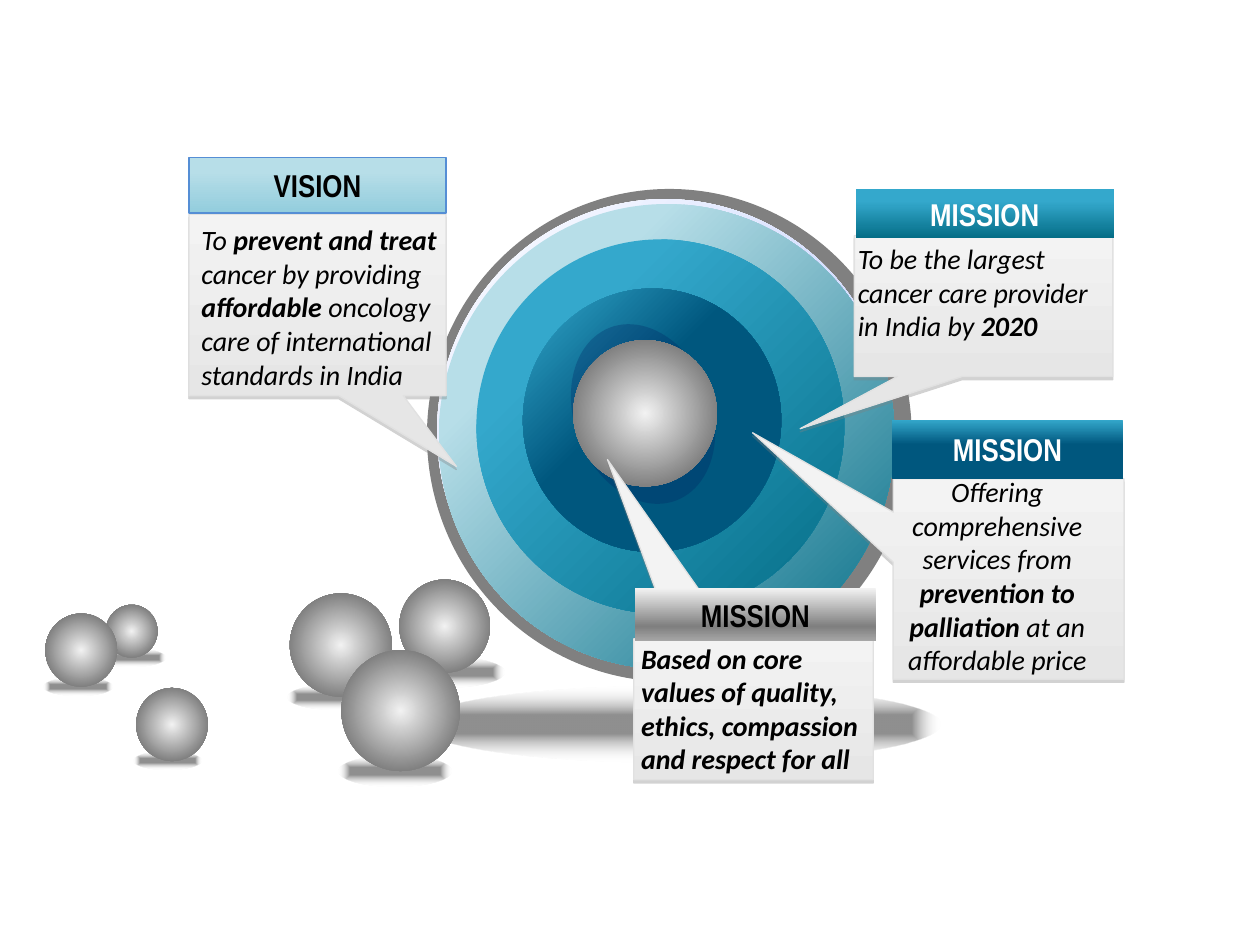
from dataclasses import dataclass

from lxml import etree
from pptx import Presentation
from pptx import util as u
from pptx.dml.color import RGBColor
from pptx.enum import shapes, text
from pptx.oxml.ns import nsdecls, qn


@dataclass(frozen=True)
class Theme:
    title_font: str = "Arial Narrow"
    body_font: str = "Calibri"
    title_size: int = 18
    body_size: int = 16
    ink: str = "000000"
    light: str = "FFFFFF"
    callout_line: str = "E1E1E1"
    vision_line: str = "558ED5"
    shade: str = "808080"


THEME = Theme()
CENTER = (50, 50, 50, 50)

FILLS = {
    "rim": dict(stops=[(0, "808080")]),
    "edge": dict(stops=[(0, "FFFFFF"), (53, "D4DEFF"), (83, "D4DEFF"), (100, "96AB94")], angle=45),
    "pale": dict(stops=[(25, "B7DEE8"), (100, "046D86")], angle=45),
    "teal": dict(stops=[(0, "34A8CC"), (25, "34A8CC"), (100, "046D86")], angle=45),
    "navy": dict(stops=[(58, "00577E"), (100, "34A8CC")], path="circle", focus=(100, 100, 0, 0)),
    "glow": dict(stops=[(0, "002060", 28)]),
    "ball": dict(stops=[(0, "F2F2F2"), (72, "808080"), (100, "A6A6A6")], path="circle", focus=CENTER),
    "ground": dict(stops=[(24, "000000", 44), (100, "FFFFFF", 0)], path="shape", focus=CENTER),
    "callout": dict(stops=[(0, "F3F3F3"), (100, "E6E6E6")], angle=90),
    "vision title": dict(stops=[(25, "B7DEE8"), (100, "93CDDD")], angle=90),
    "teal title": dict(stops=[(0, "34A8CC"), (25, "34A8CC"), (100, "046D86")], angle=90),
    "navy title": dict(stops=[(0, "34A8CC"), (42, "00577E"), (100, "00577E")], angle=90),
    "grey title": dict(stops=[(0, "F2F2F2"), (72, "7F7F7F"), (100, "A6A6A6")], angle=90),
}

ELLIPSES = [
    ("rim", (244, 108, 277, 281.5), 0),
    ("edge", (249.8, 113.8, 260.6, 265.7), 0),
    ("pale", (250.6, 116.6, 260.6, 265.7), 0),
    ("teal", (272.2, 136.8, 210.2, 213.8), 0),
    ("navy", (298.8, 164.9, 147.6, 150.5), 0),
    ("ground", (238.3, 391.7, 298.8, 43.9), 0),
    ("glow", (314.6, 197.3, 105.8, 78.5), 248.9),
    ("ball", (327.6, 194.4, 82.1, 83.5), 0),
]

SMALL_BALLS = [
    ((218.9, 375.1, 69.1, 18), (228.2, 331.2, 51.8, 53.3)),
    ((164.2, 391, 55.4, 14.4), (165.6, 339.1, 58.3, 59)),
    ((55.4, 370.8, 38.9, 10.1), (60.5, 345.6, 29.5, 30.2)),
    ((25.2, 387.4, 38.9, 10.1), (25.9, 350.6, 41, 41.8)),
    ((193.7, 432, 64.1, 17.3), (195.1, 371.5, 67.7, 69.1)),
    ((76.3, 429.8, 38.9, 10.1), (77.8, 393.1, 41, 41.8)),
]

CALLOUTS = [
    dict(title="VISION", fill="vision title", color=THEME.ink, line=THEME.vision_line,
         title_box=(108, 90, 146.9, 31.7), box=(108, 122.4, 146.9, 103.7),
         text_box=(108, 123.8, 162, 104.4), tip=(0.54, 0.89), align=text.PP_ALIGN.LEFT,
         runs=[("To ", False), ("prevent and treat ", True), ("cancer by providing ", False),
               ("affordable", True), (" oncology care of international standards in India", False)]),
    dict(title="MISSION", fill="teal title", color=THEME.light, line=None,
         title_box=(488.9, 108, 147.6, 28.1), box=(488.2, 134.6, 147.6, 80.6),
         text_box=(483.1, 134.6, 158.4, 65.5), tip=(-0.71, 0.87), align=text.PP_ALIGN.LEFT,
         runs=[("To be the largest cancer care provider in India by ", False), ("2020", True)]),
    dict(title="MISSION", fill="grey title", color=THEME.ink, line=None,
         title_box=(362.9, 336.2, 137.5, 30.2), box=(362.2, 365, 136.8, 80.6),
         text_box=(359.3, 362.9, 149, 85), tip=(-0.61, -1.77), align=text.PP_ALIGN.LEFT,
         runs=[("Based on core values of quality, ethics, compassion and respect for all", True)]),
    dict(title="MISSION", fill="navy title", color=THEME.light, line=None,
         title_box=(509.8, 239.8, 131.8, 33.8), box=(510.5, 273.6, 131.8, 114.5),
         text_box=(504, 267.8, 131.8, 123.8), tip=(-1.11, -0.73), align=text.PP_ALIGN.CENTER,
         runs=[("Offering comprehensive services from ", False),
               ("prevention to palliation ", True), ("at an affordable price", False)]),
]


def points(box):
    return [u.Pt(value) for value in box]


def color_xml(color, alpha=100):
    return f'<a:srgbClr val="{color}"><a:alpha val="{alpha * 1000}"/></a:srgbClr>'


def fill_xml(stops, angle=0, path=None, focus=None):
    if len(stops) == 1:
        return f'<a:solidFill {nsdecls("a")}>{color_xml(*stops[0][1:])}</a:solidFill>'
    marks = "".join(f'<a:gs pos="{stop[0] * 1000}">{color_xml(*stop[1:])}</a:gs>' for stop in stops)
    if path:
        sides = " ".join(f'{side}="{value * 1000}"' for side, value in zip("ltrb", focus))
        spread = f'<a:path path="{path}"><a:fillToRect {sides}/></a:path>'
    else:
        spread = f'<a:lin ang="{angle * 60000}" scaled="0"/>'
    return f'<a:gradFill {nsdecls("a")} rotWithShape="1"><a:gsLst>{marks}</a:gsLst>{spread}</a:gradFill>'


def add_filled(slide, kind, box, fill, line=None):
    shape = slide.shapes.add_shape(kind, *points(box))
    geometry = shape._element.spPr.find(qn("a:prstGeom"))
    geometry.addnext(etree.fromstring(fill_xml(**FILLS[fill])))
    if line:
        shape.line.color.rgb = RGBColor.from_string(line)
        shape.line.width = u.Pt(0.75)
    else:
        shape.line.fill.background()
    shape.shadow.inherit = False
    return shape


def style(paragraph, font, size, color, align):
    paragraph.alignment = align
    paragraph.font.name = font
    paragraph.font.size = u.Pt(size)
    paragraph.font.color.rgb = RGBColor.from_string(color)


def add_callout(slide, callout):
    shape = add_filled(slide, shapes.MSO_SHAPE.RECTANGULAR_CALLOUT, callout["box"],
                       "callout", THEME.callout_line)
    for index, value in enumerate(callout["tip"]):
        shape.adjustments[index] = value
    effects = shape._element.spPr.find(qn("a:effectLst"))
    effects.append(etree.fromstring(
        f'<a:outerShdw {nsdecls("a")} blurRad="0" dist="{u.Pt(1.8)}" dir="5400000" '
        f'rotWithShape="0">{color_xml(THEME.shade, 35)}</a:outerShdw>'))

    frame = slide.shapes.add_textbox(*points(callout["text_box"])).text_frame
    frame.word_wrap = True
    frame.auto_size = text.MSO_AUTO_SIZE.SHAPE_TO_FIT_TEXT
    paragraph = frame.paragraphs[0]
    style(paragraph, THEME.body_font, THEME.body_size, THEME.ink, callout["align"])
    paragraph.font.italic = True
    for words, bold in callout["runs"]:
        run = paragraph.add_run()
        run.text = words
        run.font.bold = bold


def add_title(slide, callout):
    shape = add_filled(slide, shapes.MSO_SHAPE.RECTANGLE, callout["title_box"],
                       callout["fill"], callout["line"])
    frame = shape.text_frame
    frame.vertical_anchor = text.MSO_ANCHOR.MIDDLE
    paragraph = frame.paragraphs[0]
    paragraph.text = callout["title"]
    style(paragraph, THEME.title_font, THEME.title_size, callout["color"], text.PP_ALIGN.CENTER)
    paragraph.font.bold = True


def main():
    presentation = Presentation()
    presentation.slide_width, presentation.slide_height = points((720, 540))
    slide = presentation.slides.add_slide(presentation.slide_layouts[6])
    for fill, box, rotation in ELLIPSES:
        add_filled(slide, shapes.MSO_SHAPE.OVAL, box, fill).rotation = rotation
    for ground, ball in SMALL_BALLS:
        add_filled(slide, shapes.MSO_SHAPE.OVAL, ground, "ground")
        add_filled(slide, shapes.MSO_SHAPE.OVAL, ball, "ball")
    for callout in CALLOUTS:
        add_callout(slide, callout)
    for callout in CALLOUTS:
        add_title(slide, callout)
    presentation.save("out.pptx")


if __name__ == "__main__":
    main()
